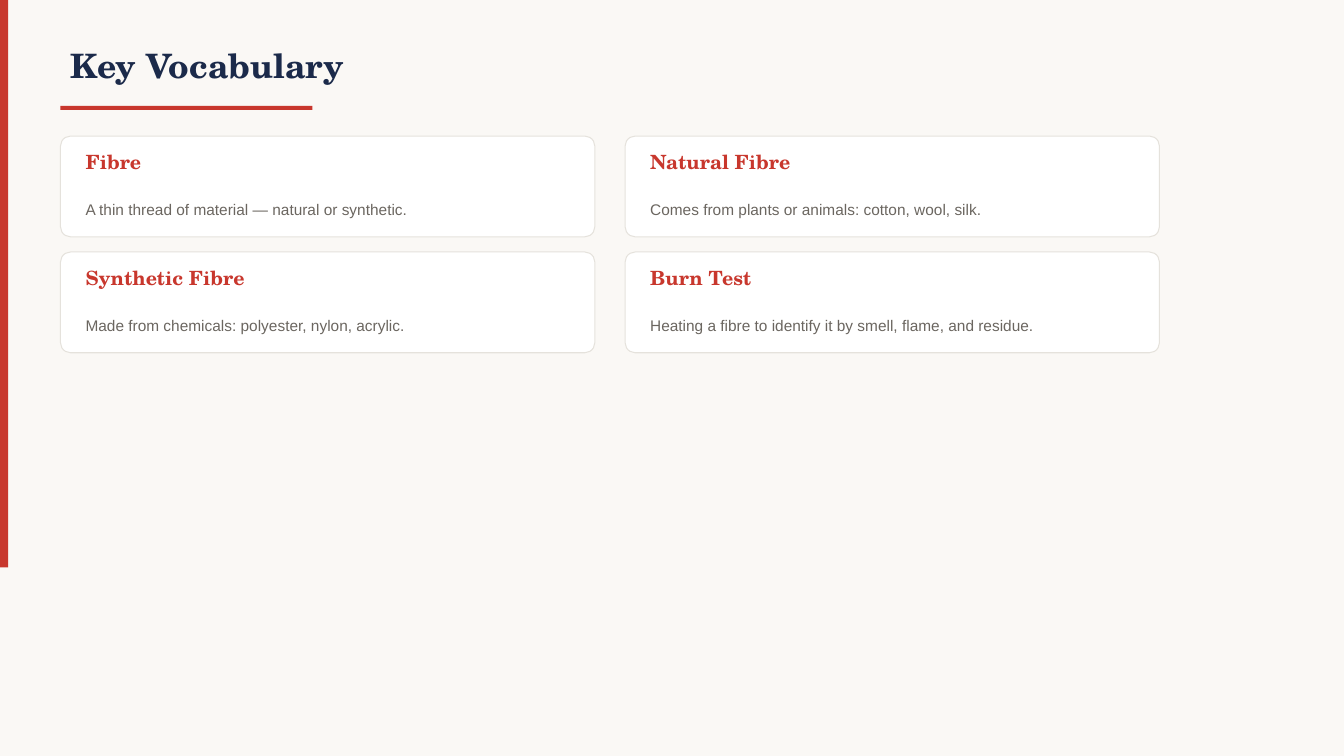
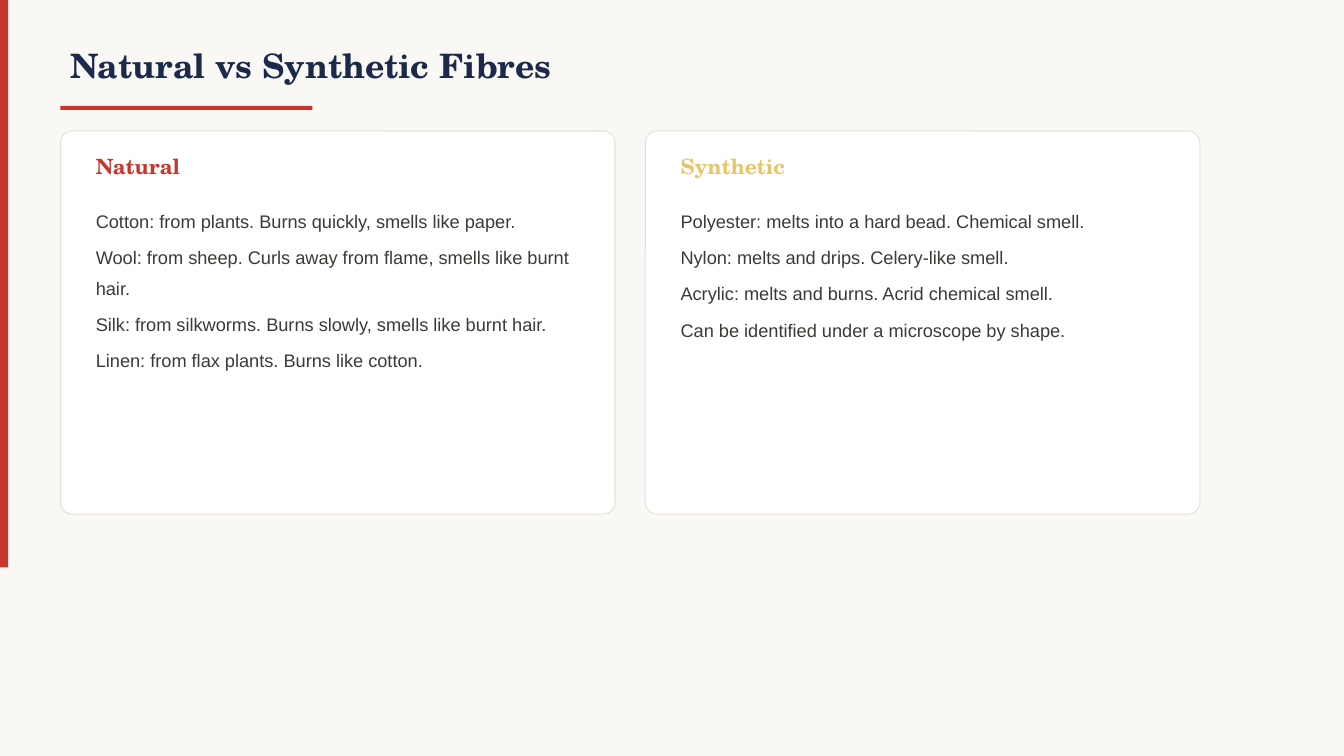
from dataclasses import dataclass

import lxml.etree
import pptx
import pptx.dml.color
import pptx.enum.shapes
import pptx.enum.text
import pptx.oxml.ns
import pptx.util

Inches = pptx.util.Inches
MIDDLE = pptx.enum.text.MSO_ANCHOR.MIDDLE
TOP = pptx.enum.text.MSO_ANCHOR.TOP
RECTANGLE = pptx.enum.shapes.MSO_SHAPE.RECTANGLE
ROUNDED = pptx.enum.shapes.MSO_SHAPE.ROUNDED_RECTANGLE

# Palette and typefaces
PAPER, WHITE, BORDER = "FAF8F5", "FFFFFF", "E5E2DC"
RED, GOLD, NAVY = "C8372D", "E9C46A", "1B2A4A"
INK, GREY = "3D3A36", "6B6660"
SERIF, SANS = "TeX Gyre Schola", "Arial"

# Shared grid, in inches
MARGIN, GUTTER = 0.6, 0.3
TEXT_WIDTH = 5

TITLE_ONLY_LAYOUT, COMPARISON_LAYOUT = 5, 4


@dataclass(frozen=True)
class Box:
    left: float
    top: float
    width: float
    height: float


@dataclass(frozen=True)
class TextStyle:
    font: str
    size: float
    color: str
    bold: bool = False
    anchor: pptx.enum.text.MSO_ANCHOR = MIDDLE
    line_spacing: float = 1.0
    space_after: float = 0


@dataclass(frozen=True)
class Term:
    name: str
    definition: str


@dataclass(frozen=True)
class FibreGroup:
    heading: str
    color: str
    facts: tuple[str, ...]


TITLE = TextStyle(SERIF, 24, NAVY, bold=True)
TERM = TextStyle(SERIF, 14, RED, bold=True)
DEFINITION = TextStyle(SANS, 11, GREY, line_spacing=1.3)
FACTS = TextStyle(SANS, 13, INK, anchor=TOP, line_spacing=1.4, space_after=4)

TERMS = (
    Term("Fibre", "A thin thread of material — natural or synthetic."),
    Term("Natural Fibre", "Comes from plants or animals: cotton, wool, silk."),
    Term("Synthetic Fibre", "Made from chemicals: polyester, nylon, acrylic."),
    Term("Burn Test", "Heating a fibre to identify it by smell, flame, and residue."),
)

FIBRE_GROUPS = (
    FibreGroup("Natural", RED, (
        "Cotton: from plants. Burns quickly, smells like paper.",
        "Wool: from sheep. Curls away from flame, smells like burnt hair.",
        "Silk: from silkworms. Burns slowly, smells like burnt hair.",
        "Linen: from flax plants. Burns like cotton.",
    )),
    FibreGroup("Synthetic", GOLD, (
        "Polyester: melts into a hard bead. Chemical smell.",
        "Nylon: melts and drips. Celery-like smell.",
        "Acrylic: melts and burns. Acrid chemical smell.",
        "Can be identified under a microscope by shape.",
    )),
)


def rgb(color: str) -> pptx.dml.color.RGBColor:
    return pptx.dml.color.RGBColor.from_string(color)


def write(shape, lines: tuple[str, ...], style: TextStyle) -> None:
    """Fill a text box or placeholder with unbulleted, left-aligned lines."""
    frame = shape.text_frame
    frame.word_wrap = True
    frame.auto_size = pptx.enum.text.MSO_AUTO_SIZE.NONE
    frame.vertical_anchor = style.anchor
    frame.text = "\n".join(lines)
    for paragraph in frame.paragraphs:
        properties = paragraph._p.get_or_add_pPr()
        properties.set("marL", "0")
        properties.set("indent", "0")
        lxml.etree.SubElement(properties, pptx.oxml.ns.qn("a:buNone"))
        paragraph.alignment = pptx.enum.text.PP_ALIGN.LEFT
        paragraph.line_spacing = style.line_spacing
        paragraph.space_before = pptx.util.Pt(0)
        paragraph.space_after = pptx.util.Pt(style.space_after)
        paragraph.font.name = style.font
        paragraph.font.size = pptx.util.Pt(style.size)
        paragraph.font.bold = style.bold
        paragraph.font.color.rgb = rgb(style.color)


def add_text(slide, box: Box, text: str, style: TextStyle) -> None:
    label = slide.shapes.add_textbox(
        Inches(box.left), Inches(box.top), Inches(box.width), Inches(box.height))
    write(label, (text,), style)


def fill_placeholder(slide, placeholder, box: Box, lines: tuple[str, ...],
                     style: TextStyle) -> None:
    """Move a placeholder into place, in front of everything drawn so far."""
    placeholder.left, placeholder.top = Inches(box.left), Inches(box.top)
    placeholder.width, placeholder.height = Inches(box.width), Inches(box.height)
    write(placeholder, lines, style)
    slide.shapes.element.append(placeholder.element)


def add_block(slide, kind, box: Box, color: str):
    block = slide.shapes.add_shape(
        kind, Inches(box.left), Inches(box.top), Inches(box.width), Inches(box.height))
    block.shadow.inherit = False
    block.fill.solid()
    block.fill.fore_color.rgb = rgb(color)
    block.line.fill.background()
    return block


def add_card(slide, box: Box, rounding: float) -> None:
    card = add_block(slide, ROUNDED, box, WHITE)
    card.adjustments[0] = rounding
    card.line.color.rgb = rgb(BORDER)
    card.line.width = pptx.util.Pt(0.75)


def start_slide(deck, layout: int, title: str):
    """Add a slide with the side band, the title and its underline."""
    slide = deck.slides.add_slide(deck.slide_layouts[layout])
    add_block(slide, RECTANGLE, Box(0, 0, 0.08, 5.63), RED)
    fill_placeholder(slide, slide.shapes.title, Box(MARGIN, 0.3, 10, 0.7), (title,), TITLE)
    add_block(slide, RECTANGLE, Box(MARGIN, 1.05, 2.5, 0.04), RED)
    return slide


def build_vocabulary(deck) -> None:
    slide = start_slide(deck, TITLE_ONLY_LAYOUT, "Key Vocabulary")
    width, height, row_gap = 5.3, 1, 0.15
    for index, term in enumerate(TERMS):
        row, column = divmod(index, 2)
        left = MARGIN + column * (width + GUTTER)
        top = 1.35 + row * (height + row_gap)
        text_left = left + 0.15
        add_card(slide, Box(left, top, width, height), 0.1)
        add_text(slide, Box(text_left, top + 0.08, TEXT_WIDTH, 0.35), term.name, TERM)
        add_text(slide, Box(text_left, top + 0.45, TEXT_WIDTH, 0.5),
                 term.definition, DEFINITION)


def build_comparison(deck) -> None:
    slide = start_slide(deck, COMPARISON_LAYOUT, "Natural vs Synthetic Fibres")
    # The layout numbers its heading and list placeholders in pairs: 1-2 and 3-4
    bodies = {body.placeholder_format.idx: body for body in slide.placeholders}
    width, height, top = 5.5, 3.8, 1.3
    for column, group in enumerate(FIBRE_GROUPS):
        left = MARGIN + column * (width + GUTTER)
        text_left = left + 0.25
        heading = TextStyle(SERIF, 15, group.color, bold=True)
        add_card(slide, Box(left, top, width, height), 0.03)
        fill_placeholder(slide, bodies[2 * column + 1],
                         Box(text_left, top + 0.15, TEXT_WIDTH, 0.4),
                         (group.heading,), heading)
        fill_placeholder(slide, bodies[2 * column + 2],
                         Box(text_left, top + 0.65, TEXT_WIDTH, 2.9),
                         group.facts, FACTS)


def main() -> None:
    deck = pptx.Presentation()
    deck.slide_width, deck.slide_height = Inches(13.33), Inches(7.5)
    backdrop = deck.slide_master.background.fill
    backdrop.solid()
    backdrop.fore_color.rgb = rgb(PAPER)
    build_vocabulary(deck)
    build_comparison(deck)
    deck.save("out.pptx")


if __name__ == "__main__":
    main()
